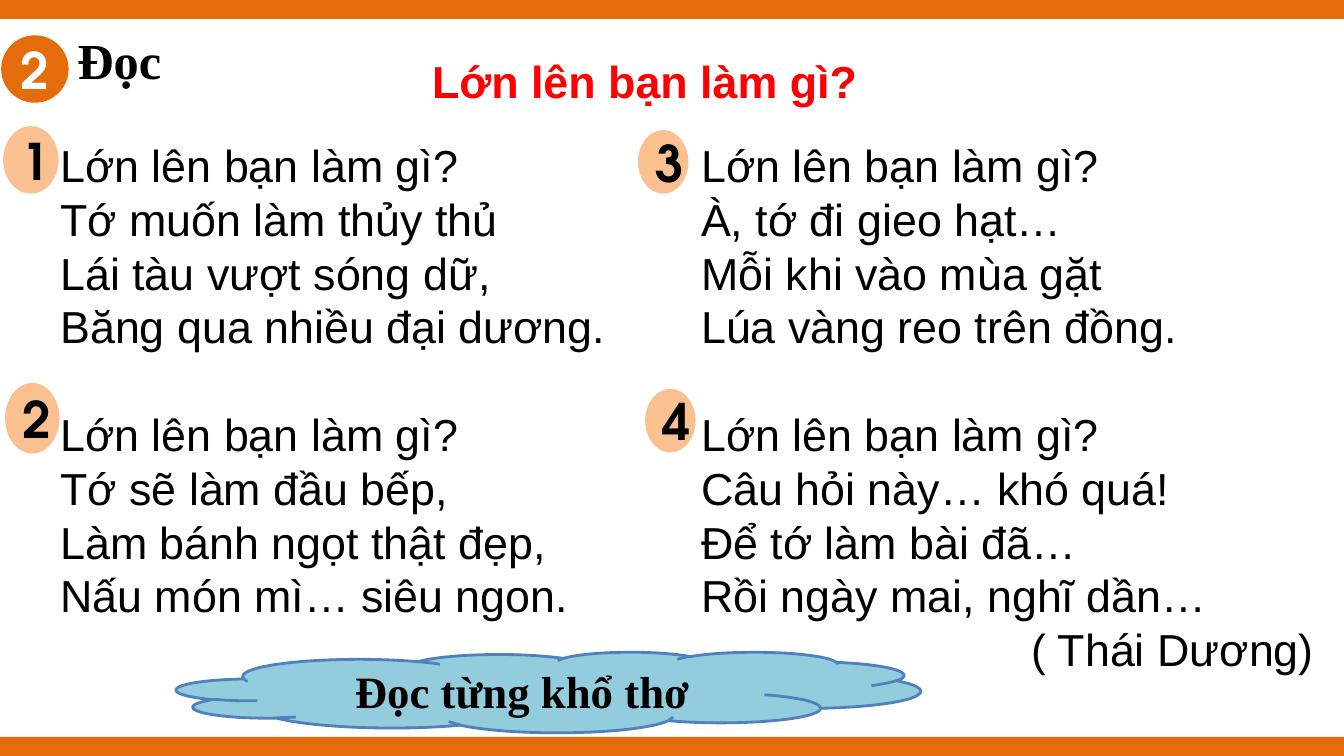
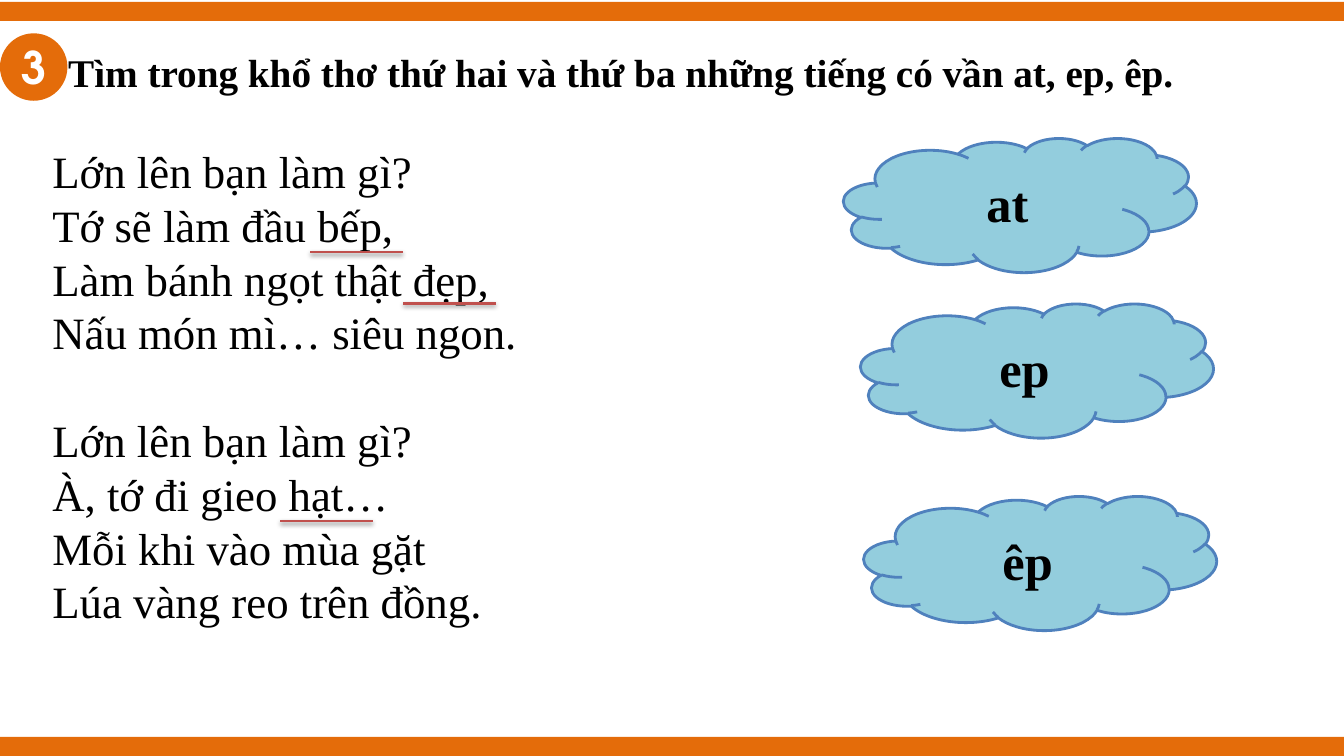
from typing import NamedTuple

from lxml.etree import SubElement
from pptx import Presentation
from pptx.dml.color import RGBColor
from pptx.enum.shapes import MSO_CONNECTOR as CONN, MSO_SHAPE as SHAPE
from pptx.enum.text import MSO_ANCHOR as ANCHOR, PP_ALIGN as ALIGN
from pptx.oxml.ns import qn
from pptx.util import Cm, Pt

ORANGE = RGBColor(0xE4, 0x6C, 0x0A)
PEACH = RGBColor(0xFA, 0xC0, 0x90)
SKY = RGBColor(0x93, 0xCD, 0xDD)
BLUE = RGBColor(0x4F, 0x81, 0xBD)
RED = RGBColor(0xFF, 0x00, 0x00)
BRICK = RGBColor(0xC0, 0x50, 0x4D)
BLACK = RGBColor(0x00, 0x00, 0x00)
WHITE = RGBColor(0xFF, 0xFF, 0xFF)

SANS, SERIF, ROUND = "Arial", "Times New Roman", "TeX Gyre Adventor"
WIDTH, HEIGHT, BAND = 33.87, 19.05, 0.48
POEM_SIZE, POEM_PITCH = 32, Pt(38.4)

QUESTION = "Lớn lên bạn làm gì?"
SAILOR = (QUESTION, "Tớ muốn làm thủy thủ", "Lái tàu vượt sóng dữ,",
          "Băng qua nhiều đại dương.")
COOK = (QUESTION, "Tớ sẽ làm đầu bếp,", "Làm bánh ngọt thật đẹp,",
        "Nấu món mì… siêu ngon.")
FARMER = (QUESTION, "À, tớ đi gieo hạt…", "Mỗi khi vào mùa gặt",
          "Lúa vàng reo trên đồng.")
UNDECIDED = (QUESTION, "Câu hỏi này… khó quá!", "Để tớ làm bài đã…",
             "Rồi ngày mai, nghĩ dần…")
AUTHOR = "( Thái Dương)"


class Box(NamedTuple):
    """Left, top, width and height in centimetres."""
    x: float
    y: float
    w: float
    h: float

    def lengths(self) -> tuple:
        return tuple(Cm(v) for v in self)


class Style(NamedTuple):
    font: str
    size: int
    color: RGBColor = BLACK
    bold: bool = True


class Label(NamedTuple):
    text: str
    box: Box


STANZA_BADGES = (
    Label("1", Box(0.08, 3.18, 1.4, 1.7)),
    Label("2", Box(0.13, 9.65, 1.37, 1.78)),
    Label("3", Box(16.08, 3.28, 1.27, 1.6)),
    Label("4", Box(16.26, 9.8, 1.27, 1.6)),
)
RHYME_CLOUDS = (
    Label("at", Box(21.26, 3.48, 8.89, 3.38)),
    Label("ep", Box(21.69, 7.65, 8.89, 3.38)),
    Label("êp", Box(21.77, 12.5, 8.89, 3.38)),
)
UNDERLINE_STARTS = ((7.82, 6.35), (10.16, 7.65), (7.06, 13.13))
UNDERLINE_LENGTH = 2.34


def add_run(p, text: str, style: Style, align=ALIGN.LEFT) -> None:
    p.alignment = align
    r = p.add_run()
    r.text = text
    r.font.name = style.font
    r.font.size = Pt(style.size)
    r.font.bold = style.bold
    r.font.color.rgb = style.color


def add_shape(s, kind, box: Box, fill: RGBColor):
    sp = s.shapes.add_shape(kind, *box.lengths())
    sp.shadow.inherit = False
    sp.fill.solid()
    sp.fill.fore_color.rgb = fill
    sp.line.fill.background()
    return sp


def add_labelled(s, kind, label: Label, fill: RGBColor, style: Style):
    sp = add_shape(s, kind, label.box, fill)
    sp.text_frame.vertical_anchor = ANCHOR.MIDDLE
    add_run(sp.text_frame.paragraphs[0], label.text, style, ALIGN.CENTER)
    return sp


def add_cloud(s, label: Label, size: int) -> None:
    sp = add_labelled(s, SHAPE.CLOUD, label, SKY, Style(SERIF, size))
    sp.line.color.rgb = BLUE
    sp.line.width = Pt(2)


def add_text_frame(s, box: Box):
    tf = s.shapes.add_textbox(*box.lengths()).text_frame
    tf.word_wrap = True
    return tf


def add_line(s, label: Label, style: Style, align=ALIGN.LEFT) -> None:
    add_run(add_text_frame(s, label.box).paragraphs[0], label.text, style, align)


def add_poem(s, box: Box, stanzas: tuple, font: str, author: str = "") -> None:
    """Stanzas one line apart, with the author's name at the right below."""
    tf = add_text_frame(s, box)
    style = Style(font, POEM_SIZE, bold=False)
    p = tf.paragraphs[0]
    for i, stanza in enumerate(stanzas):
        for j, verse in enumerate(stanza):
            if i or j:
                p = tf.add_paragraph()
            if i and not j:
                p.space_before = POEM_PITCH
            p.line_spacing = POEM_PITCH
            add_run(p, verse, style)
    if author:
        p = tf.add_paragraph()
        p.line_spacing = POEM_PITCH
        add_run(p, author, style, ALIGN.RIGHT)


def add_underline(s, x: float, y: float) -> None:
    line = s.shapes.add_connector(CONN.STRAIGHT, Cm(x), Cm(y),
                                  Cm(x + UNDERLINE_LENGTH), Cm(y))
    line.line.color.rgb = BRICK
    line.line.width = Pt(2)
    effects = SubElement(line._element.spPr, qn("a:effectLst"))
    shadow = SubElement(effects, qn("a:outerShdw"), blurRad="40000",
                        dist="20000", dir="5400000", rotWithShape="0")
    color = SubElement(shadow, qn("a:srgbClr"), val=str(BLACK))
    SubElement(color, qn("a:alpha"), val="38000")


def add_lesson_slide(prs, band_top: float, badge: Label, badge_size: int,
                     heading: Label, heading_size: int):
    """Blank slide with both bands, the numbered badge and its heading."""
    s = prs.slides.add_slide(prs.slide_layouts[6])
    for y in (band_top, HEIGHT - BAND):
        add_shape(s, SHAPE.RECTANGLE, Box(0, y, WIDTH, BAND), ORANGE)
    add_labelled(s, SHAPE.OVAL, badge, ORANGE, Style(ROUND, badge_size, WHITE))
    add_line(s, heading, Style(SERIF, heading_size))
    return s


def build_reading(prs) -> None:
    s = add_lesson_slide(prs, 0, Label("2", Box(0.03, 0.89, 1.7, 1.7)), 36,
                         Label("Đọc", Box(1.7, 0.61, 4.01, 1.8)), 36)
    add_line(s, Label(QUESTION, Box(8.15, 1.24, 16.21, 1.6)),
             Style(SANS, 32, RED), ALIGN.CENTER)
    add_poem(s, Box(1.27, 3.35, 16.71, 15), (SAILOR, COOK), SANS)
    add_poem(s, Box(17.42, 3.35, 15.95, 15), (FARMER, UNDECIDED), SANS, AUTHOR)
    add_cloud(s, Label("Đọc từng khổ thơ", Box(4.45, 16.43, 18.75, 2.03)), 32)
    for badge in STANZA_BADGES:
        add_labelled(s, SHAPE.OVAL, badge, PEACH, Style(ROUND, 36))


def build_rhymes(prs) -> None:
    task = "Tìm trong khổ thơ thứ hai và thứ ba những tiếng có vần at, ep, êp."
    s = add_lesson_slide(prs, 0.05, Label("3", Box(0, 0.84, 1.7, 1.7)), 32,
                         Label(task, Box(1.47, 1.09, 32.3, 1.45)), 28)
    add_poem(s, Box(1.07, 3.5, 16.51, 15), (COOK, FARMER), SERIF)
    for cloud in RHYME_CLOUDS:
        add_cloud(s, cloud, 36)
    for x, y in UNDERLINE_STARTS:
        add_underline(s, x, y)


def main() -> None:
    prs = Presentation()
    prs.slide_width, prs.slide_height = Cm(WIDTH), Cm(HEIGHT)
    build_reading(prs)
    build_rhymes(prs)
    prs.save("out.pptx")


if __name__ == "__main__":
    main()
